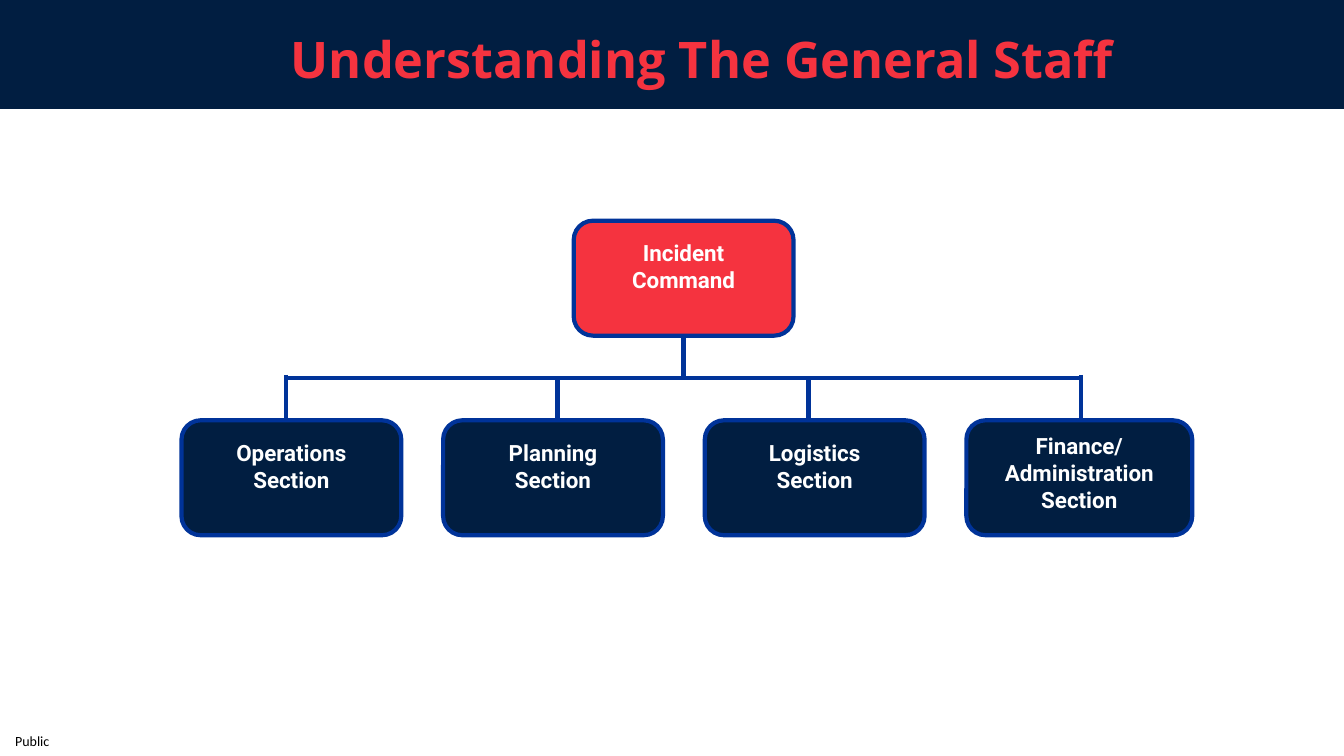
from dataclasses import dataclass

from lxml import etree
from pptx import Presentation
from pptx.dml.color import RGBColor
from pptx.enum.shapes import MSO_CONNECTOR, MSO_SHAPE
from pptx.enum.text import MSO_ANCHOR, MSO_AUTO_SIZE, PP_ALIGN
from pptx.oxml.ns import qn
from pptx.util import Inches, Pt

RECTANGLE = MSO_SHAPE.RECTANGLE
ROUNDED = MSO_SHAPE.ROUNDED_RECTANGLE
STRAIGHT = MSO_CONNECTOR.STRAIGHT
CENTER = PP_ALIGN.CENTER
TOP, MIDDLE, BOTTOM = MSO_ANCHOR.TOP, MSO_ANCHOR.MIDDLE, MSO_ANCHOR.BOTTOM
NO_AUTOSIZE = MSO_AUTO_SIZE.NONE
BOTTOM_SITE = 2


@dataclass(frozen=True)
class Theme:
    navy: str = "011E41"
    red: str = "F5333F"
    blue: str = "003399"
    white: str = "FFFFFF"
    black: str = "000000"
    title_font: str = "Open Sans"
    box_font: str = "Roboto"
    footer_font: str = "Calibri"
    title_size: int = 36
    box_size: int = 16
    footer_size: int = 10
    line_width: int = 3


@dataclass(frozen=True)
class Unit:
    label: str
    left: float
    top: float
    fill: str
    width: float = 2.18
    text_top: float = 0.13


@dataclass(frozen=True)
class Line:
    start: tuple[float, float]
    end: tuple[float, float]


THEME = Theme()
BOX_HEIGHT = 1.14
BUS_Y = 3.75
SECTION_TOP = 4.17
SECTION_LEFT, SECTION_STEP = 1.8, 2.595

COMMAND = Unit("Incident Command", 5.69, 2.19, THEME.red)
SECTIONS = [
    Unit(label, SECTION_LEFT + index * SECTION_STEP, SECTION_TOP, THEME.navy, width, text_top)
    for index, (label, width, text_top) in enumerate([
        ("Operations Section", 2.18, 0.13),
        ("Planning Section", 2.18, 0.13),
        ("Logistics Section", 2.18, 0.13),
        ("Finance/ Administration Section", 2.24, 0.06),
    ])
]
# The outer drops start a little above the bus, closing its corners
DROPS = [Line((x, y), (x, y + 0.52))
         for x, y in [(2.84, 3.72), (5.53, BUS_Y), (8.02, BUS_Y), (10.72, 3.72)]]
BUS = Line((2.84, BUS_Y), (10.72, BUS_Y))


def write_text(shape, text: str, *, font: str, size: int, color: str, bold: bool = True,
               anchor=MIDDLE, wrap: bool = True,
               margins: tuple[float, float, float, float] = (0.1, 0.05, 0.1, 0.05)) -> None:
    """Fill a shape with one centred paragraph; margins are left, top, right, bottom."""
    frame = shape.text_frame
    frame.auto_size = NO_AUTOSIZE
    frame.word_wrap = wrap
    frame.vertical_anchor = anchor
    (frame.margin_left, frame.margin_top,
     frame.margin_right, frame.margin_bottom) = map(Inches, margins)
    para = frame.paragraphs[0]
    para.alignment = CENTER
    span = para.add_run()
    span.text = text
    span.font.name = font
    span.font.size = Pt(size)
    span.font.bold = bold
    span.font.color.rgb = RGBColor.from_string(color)


def add_box(page, kind, left: float, top: float, width: float, height: float, fill: str):
    box = page.shapes.add_shape(kind, Inches(left), Inches(top), Inches(width), Inches(height))
    box.shadow.inherit = False
    box.fill.solid()
    box.fill.fore_color.rgb = RGBColor.from_string(fill)
    box.line.fill.background()
    return box


def style_line(line) -> None:
    line.color.rgb = RGBColor.from_string(THEME.blue)
    line.width = Pt(THEME.line_width)


def add_unit(page, unit: Unit):
    box = add_box(page, ROUNDED, unit.left, unit.top, unit.width, BOX_HEIGHT, unit.fill)
    box.adjustments[0] = 0.167
    style_line(box.line)
    write_text(box, unit.label, font=THEME.box_font, size=THEME.box_size, color=THEME.white,
               anchor=TOP, margins=(0.25, unit.text_top, 0.25, 0.05))
    return box


def add_line(page, line: Line):
    connector = page.shapes.add_connector(STRAIGHT, *map(Inches, line.start + line.end))
    style_line(connector.line)
    etree.SubElement(connector.element.spPr, qn("a:effectLst"))
    return connector


def add_header(page) -> None:
    band = add_box(page, RECTANGLE, -0.02, -0.01, 13.35, 1.09, THEME.navy)
    title = page.shapes.title
    band.element.addnext(title.element)
    title.left, title.top, title.width, title.height = map(Inches, (0.73, 0.54, 12.6, 0.39))
    write_text(title, "Understanding The General Staff ", font=THEME.title_font,
               size=THEME.title_size, color=THEME.red, anchor=BOTTOM)


def add_chart_of_units(page) -> None:
    # Drops lie behind the section boxes
    for drop in DROPS:
        add_line(page, drop)
    for section in SECTIONS:
        add_unit(page, section)

    # Command box, its trunk and the bus
    command = add_unit(page, COMMAND)
    middle = COMMAND.left + COMMAND.width / 2
    trunk = add_line(page, Line((middle, COMMAND.top + BOX_HEIGHT), (middle, BUS_Y)))
    trunk.begin_connect(command, BOTTOM_SITE)
    add_line(page, BUS)


def add_footer(page) -> None:
    footer = page.shapes.add_textbox(Inches(0), Inches(7.21), Inches(0.64), Inches(0.29))
    write_text(footer, "Public", font=THEME.footer_font, size=THEME.footer_size,
               color=THEME.black, bold=False, wrap=False, margins=(0, 0, 0, 0))


def main() -> None:
    deck = Presentation()
    deck.slide_width, deck.slide_height = Inches(13.33), Inches(7.5)
    page = deck.slides.add_slide(deck.slide_layouts.get_by_name("Title Only"))
    add_header(page)
    add_chart_of_units(page)
    add_footer(page)
    deck.save("out.pptx")


if __name__ == "__main__":
    main()
